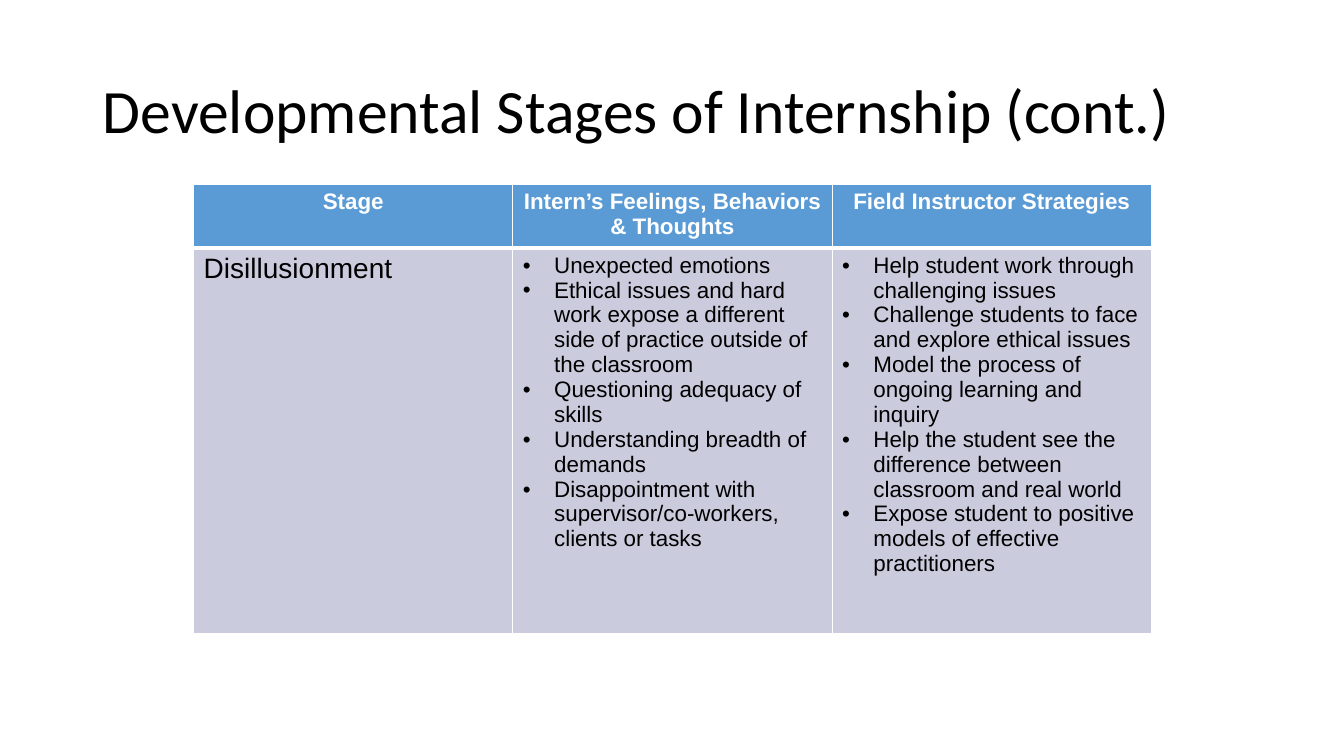
from lxml.etree import SubElement
from pptx import Presentation
from pptx.dml.color import RGBColor
from pptx.enum.text import MSO_ANCHOR as Anchor, PP_ALIGN as Align
from pptx.oxml.ns import qn
from pptx.util import Inches, Pt

COLORS = {"white": "FFFFFF", "black": "000000", "header": "5B9BD5", "body": "CBCBDE"}
HEADINGS = [
    "Stage",
    "Intern’s Feelings, Behaviors & Thoughts",
    "Field Instructor Strategies",
]
FEELINGS = [
    "Unexpected emotions",
    "Ethical issues and hard work expose a different side of practice outside of the classroom",
    "Questioning adequacy of skills",
    "Understanding breadth of demands",
    "Disappointment with supervisor/co-workers, clients or tasks",
]
STRATEGIES = [
    "Help student work through challenging issues",
    "Challenge students to face and explore ethical issues",
    "Model the process of ongoing learning and inquiry",
    "Help the student see the difference between classroom and real world",
    "Expose student to positive models of effective practitioners",
]


class StageSlide:
    """Holds the text style and the slide being built."""

    def __init__(self, presentation):
        """Add a title-only slide."""
        self.slide = presentation.slides.add_slide(presentation.slide_layouts[5])
        self.table_font = "Arial"
        self.title_font = "Calibri"

    def format_text(self, paragraph, font_name, size, color, bold=False):
        """Apply one font to every run of a paragraph."""
        for run in paragraph.runs:
            run.font.name = font_name
            run.font.size = Pt(size)
            run.font.bold = bold
            run.font.color.rgb = RGBColor.from_string(COLORS[color])

    def add_title(self, text):
        """Fill and place the title placeholder."""
        title = self.slide.shapes.title
        title.left, title.top = Inches(0.92), Inches(0.4)
        title.width, title.height = Inches(11.5), Inches(1.45)
        title.text_frame.text = text
        title.text_frame.word_wrap = True
        title.text_frame.vertical_anchor = Anchor.MIDDLE
        paragraph = title.text_frame.paragraphs[0]
        paragraph.alignment = Align.LEFT
        paragraph.line_spacing = 0.9
        self.format_text(paragraph, self.title_font, 44, "black")

    def add_bullet(self, paragraph):
        """Give a paragraph a hanging round bullet."""
        properties = paragraph._p.get_or_add_pPr()
        properties.set("marL", str(Inches(0.31)))
        properties.set("indent", str(-Inches(0.31)))
        SubElement(properties, qn("a:buFont"), typeface=self.table_font)
        SubElement(properties, qn("a:buChar"), char="•")

    def add_borders(self, cell, top, bottom):
        """Draw white cell borders, one point wide at the sides."""
        properties = cell._tc.get_or_add_tcPr()
        for side, width in {"L": 1, "R": 1, "T": top, "B": bottom}.items():
            line = SubElement(properties, qn(f"a:ln{side}"), w=str(Pt(width)))
            fill = SubElement(line, qn("a:solidFill"))
            SubElement(fill, qn("a:srgbClr"), val=COLORS["white"])

    def fill_cell(self, cell, lines, is_header, size=16, bulleted=False):
        """Write and style one table cell."""
        self.add_borders(cell, *((1, 3) if is_header else (3, 1)))
        cell.fill.solid()
        fill_color = COLORS["header" if is_header else "body"]
        cell.fill.fore_color.rgb = RGBColor.from_string(fill_color)
        cell.text_frame.text = "\n".join(lines)
        for paragraph in cell.text_frame.paragraphs:
            if bulleted:
                self.add_bullet(paragraph)
            paragraph.alignment = Align.CENTER if is_header else Align.LEFT
            color = "white" if is_header else "black"
            self.format_text(paragraph, self.table_font, size, color, is_header)

    def add_stage_table(self, headings, stage, bullet_lists):
        """Add the table with a heading row and one stage row."""
        frame = self.slide.shapes.add_table(
            2, len(headings), Inches(1.92), Inches(1.83), Inches(9.5), Inches(4.46)
        )
        table = frame.table
        table.rows[0].height = Inches(0.63)
        table.rows[1].height = Inches(3.83)
        for column, heading in enumerate(headings):
            self.fill_cell(table.cell(0, column), [heading], True)
        self.fill_cell(table.cell(1, 0), [stage], False, size=20)
        for column, bullets in enumerate(bullet_lists, start=1):
            self.fill_cell(table.cell(1, column), bullets, False, bulleted=True)


def main():
    """Build and save the presentation."""
    presentation = Presentation()
    presentation.slide_width = Inches(13.33)
    presentation.slide_height = Inches(7.5)
    stage_slide = StageSlide(presentation)
    stage_slide.add_title("Developmental Stages of Internship (cont.)")
    stage_slide.add_stage_table(HEADINGS, "Disillusionment", [FEELINGS, STRATEGIES])
    presentation.save("out.pptx")


if __name__ == "__main__":
    main()
